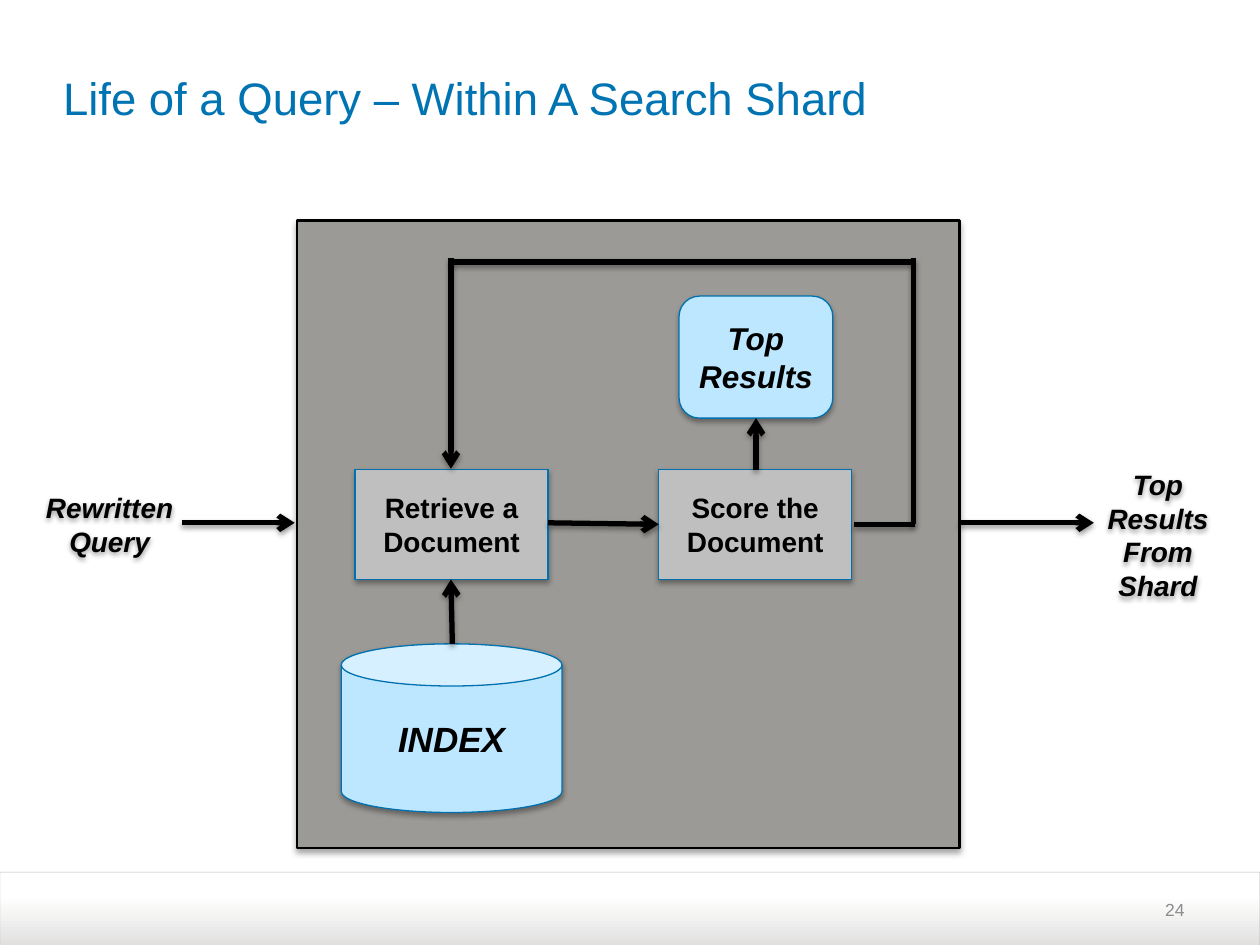
from lxml import etree
from pptx import Presentation
from pptx.dml.color import RGBColor
from pptx.enum.shapes import MSO_CONNECTOR, MSO_SHAPE
from pptx.enum.text import MSO_ANCHOR, PP_ALIGN
from pptx.oxml.ns import qn
from pptx.util import Cm, Pt

RECTANGLE = MSO_SHAPE.RECTANGLE
ROUNDED = MSO_SHAPE.ROUNDED_RECTANGLE
CAN = MSO_SHAPE.CAN
STRAIGHT = MSO_CONNECTOR.STRAIGHT
MIDDLE = MSO_ANCHOR.MIDDLE
LEFT, CENTER, RIGHT = PP_ALIGN.LEFT, PP_ALIGN.CENTER, PP_ALIGN.RIGHT

BLACK = RGBColor(0x00, 0x00, 0x00)
WHITE = RGBColor(0xFF, 0xFF, 0xFF)
TITLE_BLUE = RGBColor(0x00, 0x73, 0xB2)
EDGE_BLUE = RGBColor(0x00, 0x70, 0xAE)
PALE_BLUE = RGBColor(0xBD, 0xE7, 0xFF)
FRAME_GRAY = RGBColor(0x9C, 0x9A, 0x96)
STEP_GRAY = RGBColor(0xBF, 0xBF, 0xBF)
FOOTER_GRAY = RGBColor(0xE1, 0xE0, 0xDF)
FOOTER_EDGE = RGBColor(0xA6, 0xA6, 0xA6)
NUMBER_GRAY = RGBColor(0x8C, 0x8C, 0x8C)


def write_text(shape, lines, size, color=BLACK, align=CENTER, bold=False, italic=False):
    frame = shape.text_frame
    frame.vertical_anchor = MIDDLE
    frame.word_wrap = False
    para = frame.paragraphs[0]
    para.alignment = align
    for index, line in enumerate(lines):
        if index:
            para.add_line_break()
        span = para.add_run()
        span.text = line
        font = span.font
        font.name, font.size, font.color.rgb = "Arial", Pt(size), color
        font.bold, font.italic = bold, italic


def add_shadow(shape, opacity, distance):
    effects = etree.SubElement(shape._element.spPr, qn("a:effectLst"))
    outer = etree.SubElement(effects, qn("a:outerShdw"), blurRad=str(Pt(3.1)),
                             dist=str(Pt(distance)), dir="5400000", rotWithShape="0")
    tint = etree.SubElement(outer, qn("a:srgbClr"), val=str(BLACK))
    etree.SubElement(tint, qn("a:alpha"), val=str(opacity * 1000))


deck = Presentation()
deck.slide_width, deck.slide_height = Cm(25.4), Cm(19.05)
page = deck.slides.add_slide(deck.slide_layouts[5])
shapes = page.shapes

# Footer band and page number
band = shapes.add_shape(RECTANGLE, Cm(0), Cm(17.58), Cm(25.4), Cm(1.5))
band.shadow.inherit = False
band.fill.gradient()
band.fill.gradient_angle = 90
for stop, color, position in zip(band.fill.gradient_stops, (FOOTER_GRAY, WHITE), (0, 0.68)):
    stop.color.rgb, stop.position = color, position
band.line.color.rgb = FOOTER_EDGE
band.line.width = Pt(0.25)
edge_color = band._element.spPr.find(qn("a:ln")).find(".//" + qn("a:srgbClr"))
etree.SubElement(edge_color, qn("a:alpha"), val="79000")

number = shapes.add_textbox(Cm(18.21), Cm(17.83), Cm(5.92), Cm(1.02))
write_text(number, ["24"], 10, NUMBER_GRAY, RIGHT)

# Title
title = shapes.title
title.left, title.top, title.width, title.height = Cm(1.27), Cm(0.56), Cm(22.86), Cm(2.79)
write_text(title, ["Life of a Query – Within A Search Shard"], 26, TITLE_BLUE, LEFT)
title.text_frame.word_wrap = True
title.text_frame.margin_left = title.text_frame.margin_right = Cm(0)

# Input and output labels
labels = [
    (["Rewritten", "Query"], 0.66, 9.5, 3.1, 2.13),
    (["Top", "Results", "From", "Shard"], 22.05, 9.14, 2.59, 3.28),
]
for lines, *place in labels:
    label = shapes.add_textbox(*map(Cm, place))
    write_text(label, lines, 16, bold=True, italic=True)
    add_shadow(label, 38, 1.6)

# Shard frame and its boxes: kind, place, fill, edge, edge width, text, size, italic
boxes = [
    (RECTANGLE, (5.99, 4.45, 13.36, 12.65), FRAME_GRAY, BLACK, 1.5, [], 16, False),
    (CAN, (6.88, 12.98, 4.45, 3.4), PALE_BLUE, EDGE_BLUE, 0.75, ["INDEX"], 20, True),
    (ROUNDED, (13.69, 5.97, 3.1, 2.46), PALE_BLUE, EDGE_BLUE, 0.75, ["Top", "Results"], 18, True),
    (RECTANGLE, (7.16, 9.47, 3.89, 2.21), STEP_GRAY, EDGE_BLUE, 0.75,
     ["Retrieve a", "Document"], 16, False),
    (RECTANGLE, (13.28, 9.47, 3.89, 2.21), STEP_GRAY, EDGE_BLUE, 0.75,
     ["Score the", "Document"], 16, False),
]
for kind, place, fill, edge, width, lines, size, italic in boxes:
    box = shapes.add_shape(kind, *map(Cm, place))
    box.fill.solid()
    box.fill.fore_color.rgb = fill
    box.line.color.rgb = edge
    box.line.width = Pt(width)
    add_shadow(box, 35, 1.8)
    write_text(box, lines, size, bold=True, italic=italic)

# Flow lines: start x, start y, end x, end y, arrow at the end
flows = [
    (3.66, 10.54, 5.94, 10.54, True),
    (19.35, 10.54, 22.05, 10.54, True),
    (11.05, 10.54, 13.28, 10.57, True),
    (15.24, 9.47, 15.24, 8.43, True),
    (9.12, 12.98, 9.09, 11.68, True),
    # Loop back from scoring to retrieval
    (17.22, 10.57, 18.44, 10.57, False),
    (18.42, 10.57, 18.42, 5.21, False),
    (18.39, 5.28, 9.09, 5.28, False),
    (9.09, 5.21, 9.09, 9.45, True),
]
for *ends, has_arrow in flows:
    flow = shapes.add_connector(STRAIGHT, *map(Cm, ends))
    flow.line.color.rgb = BLACK
    flow.line.width = Pt(3)
    if has_arrow:
        etree.SubElement(flow._element.spPr.find(qn("a:ln")), qn("a:tailEnd"), type="arrow")
    add_shadow(flow, 38, 1.6)

deck.save("out.pptx")
